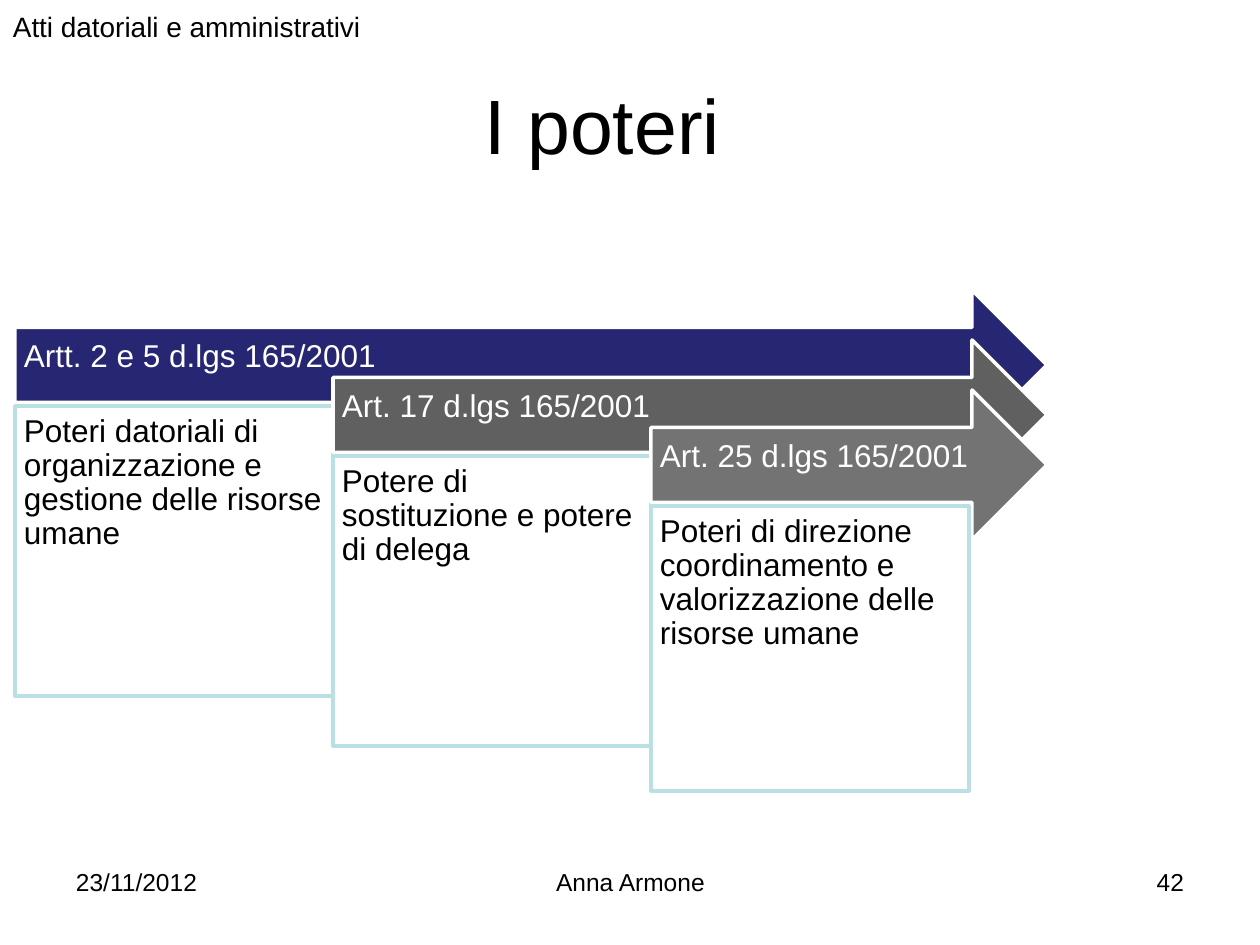
import pptx
import pptx.util
import pptx.dml.color
import pptx.enum.shapes
import pptx.enum.text

EMU_PER_PX = 914400 / 126
FONT = "Arial"
COLORS = {
    "text": "000000",
    "white": "FFFFFF",
    "box_line": "BBE0E3",
    "navy": "262673",
    "dark_gray": "606060",
    "gray": "737373",
}
SHAPES = pptx.enum.shapes.MSO_SHAPE
ALIGN = pptx.enum.text.PP_ALIGN
ANCHOR = pptx.enum.text.MSO_ANCHOR


def px(length):
    return pptx.util.Emu(round(length * EMU_PER_PX))


def rgb(name):
    return pptx.dml.color.RGBColor.from_string(COLORS[name])


class SlideBuilder:
    def __init__(self, slide):
        self.slide = slide

    def set_text(self, shape, words, size, color, align, anchor, insets, spacing=None):
        frame = shape.text_frame
        frame.word_wrap = True
        frame.vertical_anchor = anchor
        (frame.margin_left, frame.margin_top,
         frame.margin_right, frame.margin_bottom) = map(px, insets)
        paragraph = frame.paragraphs[0]
        paragraph.text = words
        paragraph.alignment = align
        paragraph.line_spacing = spacing
        paragraph.font.name = FONT
        paragraph.font.size = pptx.util.Pt(size)
        paragraph.font.color.rgb = rgb(color)

    def label(self, words, box, size, align=ALIGN.LEFT, anchor=ANCHOR.TOP):
        label = self.slide.shapes.add_textbox(*map(px, box))
        self.set_text(label, words, size, "text", align, anchor, (13, 6, 13, 6))

    def panel(self, kind, box, fill, line, words, color, anchor, insets):
        panel = self.slide.shapes.add_shape(kind, *map(px, box))
        panel.shadow.inherit = False
        panel.fill.solid()
        panel.fill.fore_color.rgb = rgb(fill)
        panel.line.color.rgb = rgb(line)
        panel.line.width = pptx.util.Pt(2)
        self.set_text(panel, words, 18, color, ALIGN.LEFT, anchor, insets, 0.9)

    def arrow(self, words, box, fill):
        self.panel(SHAPES.RIGHT_ARROW, box, fill, "white", words, "white",
                   ANCHOR.MIDDLE, (9, 9, 35, 24))

    def description(self, words, box):
        self.panel(SHAPES.RECTANGLE, box, "white", "box_line", words, "text",
                   ANCHOR.TOP, (9, 9, 9, 9))


def main():
    deck = pptx.Presentation()
    deck.slide_width, deck.slide_height = px(1260), px(945)
    builder = SlideBuilder(deck.slides.add_slide(deck.slide_layouts[6]))

    # Title
    builder.label("I poteri", (154, 45, 897, 158), 44, ALIGN.CENTER, ANCHOR.MIDDLE)

    # Stepped arrows, each with its description below
    powers = [
        ("Artt. 2 e 5 d.lgs 165/2001", "navy", 290,
         "Poteri datoriali di organizzazione e gestione delle risorse umane"),
        ("Art. 17 d.lgs 165/2001", "dark_gray", 290,
         "Potere di sostituzione e potere di delega"),
        ("Art. 25 d.lgs 165/2001", "gray", 285,
         "Poteri di direzione coordinamento e valorizzazione delle risorse umane"),
    ]
    column_width, step_down, arrows_right = 318, 50, 1047
    for step, (article, fill, height, power) in enumerate(powers):
        left = 15 + step * column_width
        drop = step * step_down
        builder.arrow(article, (left, 290 + drop, arrows_right - left, 150), fill)
        builder.description(power, (left, 406 + drop, column_width, height))

    # Footer
    builder.label("23/11/2012", (63, 861, 294, 66), 14)
    builder.label("42", (903, 861, 294, 66), 14, ALIGN.RIGHT)
    builder.label("Anna Armone", (431, 861, 399, 66), 14, ALIGN.CENTER)

    # Section heading
    builder.label("Atti datoriali e amministrativi", (0, 4, 392, 47), 16)

    deck.save("out.pptx")


if __name__ == "__main__":
    main()
